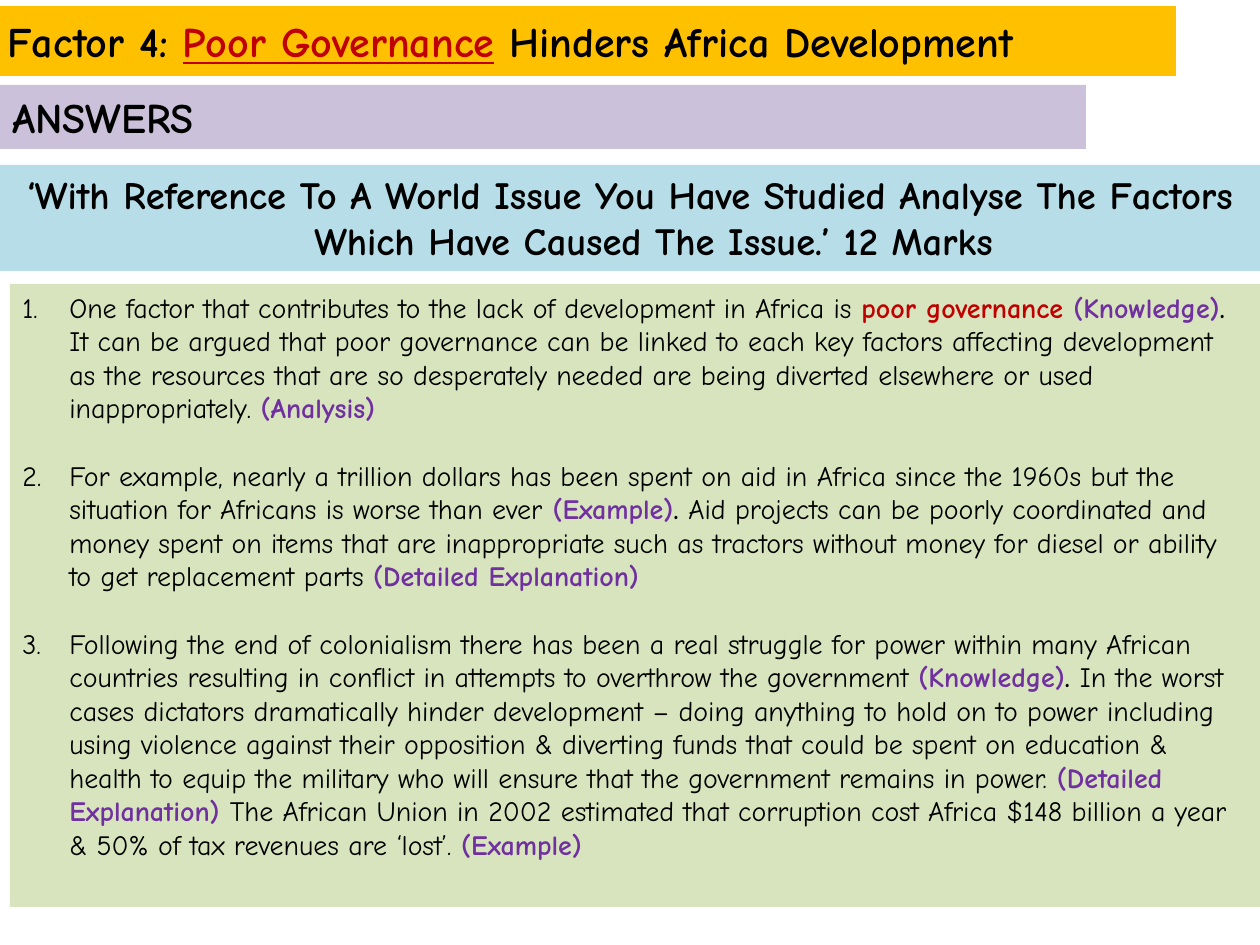
from lxml import etree
from pptx import Presentation
from pptx.dml.color import RGBColor
from pptx.enum.text import MSO_ANCHOR, MSO_AUTO_SIZE, PP_ALIGN
from pptx.oxml.ns import qn
from pptx.util import Emu, Pt

LEFT, CENTER = PP_ALIGN.LEFT, PP_ALIGN.CENTER
TOP, MIDDLE = MSO_ANCHOR.TOP, MSO_ANCHOR.MIDDLE
NO_AUTOFIT = MSO_AUTO_SIZE.NONE

PX = 914400 / 126
FONT = "Comic Neue"
HANGING = 47
PARAGRAPH_GAP = Pt(19.2)

# Run styles: colour, bold, underline
PLAIN = ("000000", False, False)
STRONG = ("000000", True, False)
KEY = ("C00000", True, False)
KEY_LINE = ("C00000", True, True)
SKILL = ("7030A0", True, False)

TITLE = [("Factor 4: ", STRONG), ("Poor Governance", KEY_LINE),
         (" Hinders Africa Development", STRONG)]
HEADING = [("ANSWERS", STRONG)]
QUESTION = [("‘With Reference To A World Issue You Have Studied Analyse The Factors "
             "Which Have Caused The Issue.’ 12 Marks", STRONG)]
ANSWERS = [
    [("One factor that contributes to the lack of development in Africa is ", PLAIN),
     ("poor governance", KEY), (" (Knowledge)", SKILL), (". ", STRONG),
     ("It can be argued that poor governance can be linked to each key factors "
      "affecting development as the resources that are so desperately needed are "
      "being diverted elsewhere or used inappropriately. ", PLAIN),
     ("(Analysis)", SKILL)],
    [("For example, nearly a trillion dollars has been spent on aid in Africa since "
      "the 1960s but the situation for Africans is worse than ever", PLAIN),
     (" (Example)", SKILL), (". ", STRONG),
     ("Aid projects can be poorly coordinated and money spent on items that are "
      "inappropriate such as tractors without money for diesel or ability to get "
      "replacement parts ", PLAIN),
     ("(Detailed Explanation)", SKILL)],
    [("Following the end of colonialism there has been a real struggle for power "
      "within many African countries resulting in conflict in attempts to overthrow "
      "the government ", PLAIN),
     ("(Knowledge)", SKILL), (". ", STRONG),
     ("In the worst cases dictators dramatically hinder development – doing anything "
      "to hold on to power including using violence against their opposition & "
      "diverting funds that could be spent on education & health to equip the "
      "military who will ensure that the government remains in power. ", PLAIN),
     ("(Detailed Explanation) ", SKILL),
     ("The African Union in 2002 estimated that corruption cost Africa $148 billion "
      "a year & 50% of tax revenues are ‘lost’. ", PLAIN),
     ("(Example)", SKILL)],
]


def px(length):
    return Emu(round(length * PX))


def color(value):
    return RGBColor.from_string(value)


def place(box, left, top, width, height, fill, anchor=TOP):
    """Position a box, fill it and prepare its text frame."""
    box.left, box.top, box.width, box.height = map(px, (left, top, width, height))
    box.fill.solid()
    box.fill.fore_color.rgb = color(fill)
    frame = box.text_frame
    frame.word_wrap = True
    frame.auto_size = NO_AUTOFIT
    frame.vertical_anchor = anchor
    return frame


def write(para, runs, size, align=LEFT, hanging=False):
    para.alignment = align
    if hanging:
        properties = para._p.get_or_add_pPr()
        properties.set("marL", str(px(HANGING)))
        properties.set("indent", str(-px(HANGING)))
    for text, (tint, bold, underline) in runs:
        span = para.add_run()
        span.text = text
        font = span.font
        font.name, font.size = FONT, Pt(size)
        font.bold, font.underline = bold, underline
        font.color.rgb = color(tint)


def number(para):
    properties = para._p.get_or_add_pPr()
    etree.SubElement(properties, qn("a:buFont"), typeface="+mj-lt")
    etree.SubElement(properties, qn("a:buAutoNum"), type="arabicPeriod")


def main():
    deck = Presentation()
    deck.slide_width, deck.slide_height = px(1260), px(945)
    page = deck.slides.add_slide(deck.slide_layouts[5])

    title = place(page.shapes.title, -5, 6, 1181, 70, "FFC000", MIDDLE)
    write(title.paragraphs[0], TITLE, 24)

    def add_panel(*area):
        return place(page.shapes.add_textbox(0, 0, 0, 0), *area)

    heading = add_panel(0, 85, 1086, 64, "CCC1DA")
    write(heading.paragraphs[0], HEADING, 24)

    question = add_panel(0, 165, 1260, 106, "B7DEE8")
    write(question.paragraphs[0], QUESTION, 22, CENTER, hanging=True)

    answers = add_panel(10, 284, 1250, 623, "D7E4BD")
    for index, runs in enumerate(ANSWERS):
        para = answers.add_paragraph() if index else answers.paragraphs[0]
        write(para, runs, 16, hanging=True)
        if index:
            para.space_before = PARAGRAPH_GAP
        number(para)

    deck.save("out.pptx")


if __name__ == "__main__":
    main()
